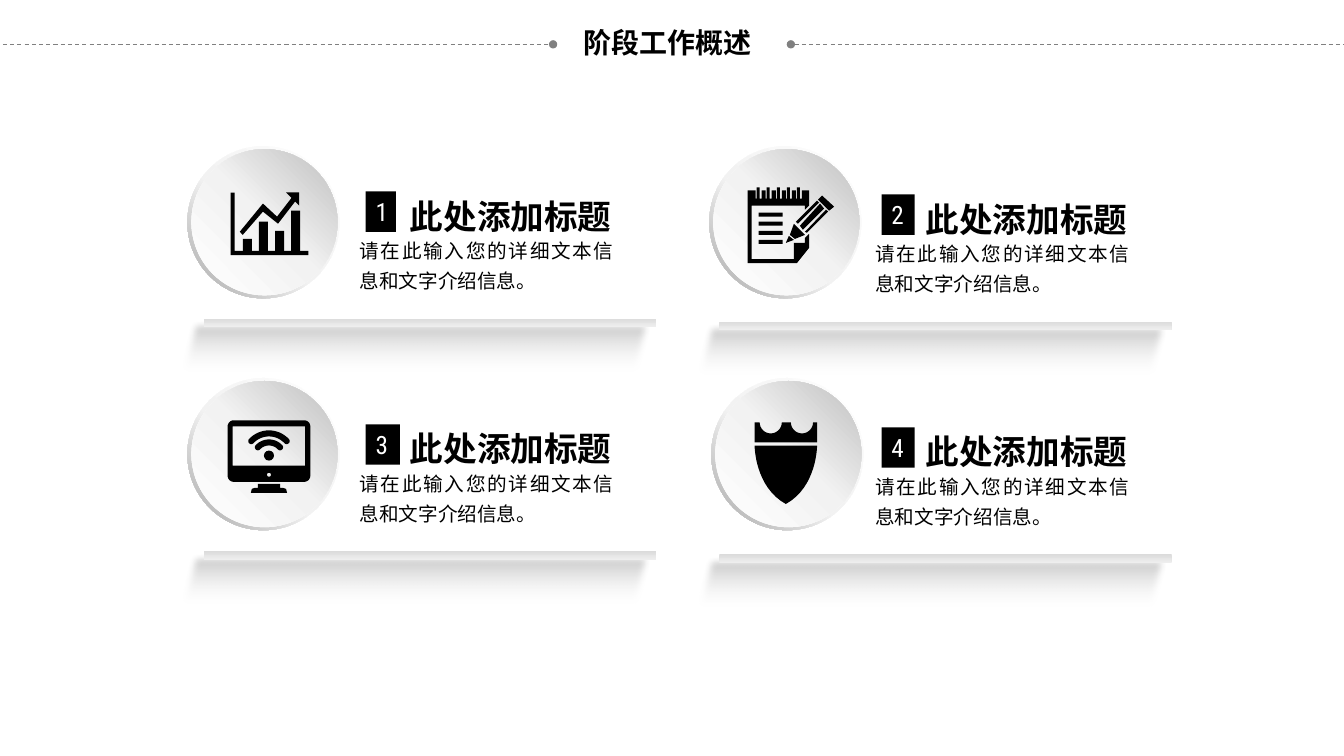
import dataclasses
import itertools
import math

import lxml.etree
import pptx
import pptx.dml.color
import pptx.enum.dml
import pptx.enum.shapes
import pptx.enum.text
import pptx.oxml
import pptx.oxml.ns
import pptx.util

Shape = pptx.enum.shapes.MSO_SHAPE
Align = pptx.enum.text.PP_ALIGN
Anchor = pptx.enum.text.MSO_ANCHOR
Point = tuple[float, float]
Stop = tuple[int, str, int]


@dataclasses.dataclass(frozen=True)
class Theme:
    black: str = "000000"
    white: str = "FFFFFF"
    rule: str = "808080"
    rim: tuple[Stop, ...] = ((0, "FFFFFF", 100), (55, "F2F2F2", 100), (100, "A6A6A6", 100))
    face: tuple[Stop, ...] = ((0, "FFFFFF", 100), (51, "F2F2F2", 100), (100, "BFBFBF", 100))
    shelf: tuple[Stop, ...] = ((0, "DBDBDB", 100), (100, "EEEEEE", 100))
    shade: tuple[Stop, ...] = ((0, "000000", 27), (81, "FFFFFF", 0))
    sans: str = "Noto Sans CJK SC"
    digit: str = "Roboto Condensed"
    head: int = 20
    title: int = 24
    label: int = 18
    body: int = 14


@dataclasses.dataclass(frozen=True)
class Box:
    left: float
    top: float
    width: float
    height: float


@dataclasses.dataclass(frozen=True)
class Card:
    number: str
    left: float
    top: float
    disc: Point
    tag: float


THEME = Theme()
CARDS = (
    Card("1", 1.71, 1.89, (1.86, 1.45), 0.3),
    Card("2", 6.83, 1.92, (7.04, 1.45), 0.33),
    Card("3", 1.71, 4.2, (1.86, 3.75), 0.34),
    Card("4", 6.83, 4.23, (7.06, 3.75), 0.33),
)


def span(inches: float) -> pptx.util.Length:
    return pptx.util.Cm(2.54 * inches)


def color(code: str) -> pptx.dml.color.RGBColor:
    return pptx.dml.color.RGBColor.from_string(code)


def paint(shape, code: str) -> None:
    shape.shadow.inherit = False
    shape.fill.solid()
    shape.fill.fore_color.rgb = color(code)
    shape.line.fill.background()


def blend(shape, stops: tuple[Stop, ...], angle: int) -> None:
    """Replace the fill by a linear gradient of (position, colour, opacity) stops."""
    marks = "".join(
        f'<a:gs pos="{pos * 1000}"><a:srgbClr val="{code}"><a:alpha val="{alpha * 1000}"/></a:srgbClr></a:gs>'
        for pos, code, alpha in stops)
    fill = pptx.oxml.parse_xml(
        f'<a:gradFill {pptx.oxml.ns.nsdecls("a")} rotWithShape="1"><a:gsLst>{marks}</a:gsLst>'
        f'<a:lin ang="{angle * 60000}" scaled="0"/></a:gradFill>')
    props = shape.element.spPr
    props.replace(props.find(pptx.oxml.ns.qn("a:solidFill")), fill)


def place(page, kind, box: Box, code: str = THEME.black):
    shape = page.add_shape(kind, *map(span, dataclasses.astuple(box)))
    paint(shape, code)
    return shape


def trace(page, *loops: list[Point]) -> None:
    """Draw one black outline; loops after the first cut holes."""
    first, *rest = [[(span(x), span(y)) for x, y in loop] for loop in loops]
    pen = page.build_freeform(*first[0])
    pen.add_line_segments(first[1:], close=True)
    for loop in rest:
        pen.move_to(*loop[0])
        pen.add_line_segments(loop[1:], close=True)
    paint(pen.convert_to_shape(), THEME.black)


def arc(x: float, y: float, radius: float, start: int, end: int) -> list[Point]:
    turns = [math.radians(start + (end - start) * k / 16) for k in range(17)]
    return [(x + radius * math.cos(t), y + radius * math.sin(t)) for t in turns]


def write(shape, text: str, font: str, size: int, code: str = THEME.black, bold: bool = False,
          align=Align.LEFT, wrap: bool = False, anchor=Anchor.TOP, space: float = 1.0) -> None:
    frame = shape.text_frame
    frame.text = text
    frame.word_wrap = wrap
    frame.vertical_anchor = anchor
    line = frame.paragraphs[0]
    line.alignment = align
    line.line_spacing = space
    run = line.runs[0]
    run.font.name, run.font.size, run.font.bold = font, pptx.util.Pt(size), bold
    run.font.color.rgb = color(code)
    east = lxml.etree.SubElement(run.font._element, pptx.oxml.ns.qn("a:ea"))
    east.set("typeface", font)


def label(page, box: Box, *args, **style) -> None:
    write(page.add_textbox(*map(span, dataclasses.astuple(box))), *args, **style)


def header(page) -> None:
    for start, end in ((-0.58, 5.49), (7.85, 13.91)):
        line = page.add_connector(pptx.enum.shapes.MSO_CONNECTOR.STRAIGHT,
                                  span(start), span(0.44), span(end), span(0.44))
        line.line.color.rgb = color(THEME.rule)
        line.line.width = pptx.util.Pt(0.75)
        line.line.dash_style = pptx.enum.dml.MSO_LINE.DASH
        for tip in ("a:headEnd", "a:tailEnd"):
            lxml.etree.SubElement(line.line._ln, pptx.oxml.ns.qn(tip)).set("type", "oval")
        lxml.etree.SubElement(line._element.spPr, pptx.oxml.ns.qn("a:effectLst"))
    label(page, Box(5.37, 0.16, 2.52, 0.52), "阶段工作概述", THEME.sans, THEME.head,
          bold=True, align=Align.CENTER, wrap=True, anchor=Anchor.MIDDLE)


def panel(page, card: Card) -> None:
    x, y = card.left, card.top
    left, top = card.disc
    rim = place(page, Shape.DONUT, Box(left, top, 1.51, 1.51))
    rim.adjustments[0] = 0.05
    blend(rim, THEME.rim, 135)
    blend(place(page, Shape.OVAL, Box(left + 0.04, top + 0.03, 1.45, 1.45)), THEME.face, 315)
    shade = place(page, Shape.PARALLELOGRAM, Box(x, y + 1.29, 4.79, 0.68))
    blend(shade, THEME.shade, 90)
    glow = shade.element.spPr.find(pptx.oxml.ns.qn("a:effectLst"))
    lxml.etree.SubElement(glow, pptx.oxml.ns.qn("a:softEdge")).set("rad", str(pptx.util.Pt(5)))
    blend(place(page, Shape.RECTANGLE, Box(x + 0.31, y + 1.27, 4.49, 0.08)), THEME.shelf, 90)
    label(page, Box(x + 2.26, y, 2.22, 0.5), "此处添加标题", THEME.sans, THEME.title, bold=True)
    label(page, Box(x + 1.76, y + 0.36, 2.72, 0.68), "请在此输入您的详细文本信息和文字介绍信息。",
          THEME.sans, THEME.body, align=Align.JUSTIFY, wrap=True, space=1.3)
    tag = place(page, Shape.RECTANGLE, Box(x + 1.92, y + 0.01, card.tag, 0.4))
    write(tag, card.number, THEME.digit, THEME.label, THEME.white)


def chart(page) -> None:
    trace(page, [(2.41, 2.33), (2.38, 2.3), (2.61, 2.02), (2.75, 2.15), (2.92, 1.93),
                 (2.96, 1.96), (2.76, 2.22), (2.61, 2.1)])
    trace(page, [(2.84, 1.91), (2.97, 1.91), (2.97, 2.04)])
    trace(page, [(3.06, 2.53), (2.29, 2.53), (2.29, 1.91), (2.33, 1.91), (2.33, 2.49), (3.06, 2.49)])
    for k, tall in enumerate((0.13, 0.3, 0.21, 0.41)):
        place(page, Shape.RECTANGLE, Box(2.41 + 0.16 * k, 2.5 - tall, 0.09, tall))


def notepad(page) -> None:
    pencil = (
        [(7.99, 2.3), (8.01, 2.31), (8.22, 2.1), (8.2, 2.08)],
        [(8.14, 2.02), (7.94, 2.24), (7.97, 2.28), (8.18, 2.07)],
        [(7.9, 2.2), (7.92, 2.22), (8.13, 2.01), (8.11, 1.99)],
        [(7.99, 2.33), (7.88, 2.22), (7.84, 2.33), (7.89, 2.37)],
        [(7.8, 2.41), (7.88, 2.38), (7.83, 2.34)],
        [(8.16, 1.94), (8.12, 1.98), (8.23, 2.09), (8.28, 2.05)],
    )
    for part in pencil:
        trace(page, part)
    teeth = [(7.42, 7.5, 1.89)]
    for k in range(5):
        x = 7.51 + 0.1 * k
        teeth += [(x, x + 0.03, 1.86), (x + 0.05, x + (0.09 if k < 4 else 0.12), 1.89)]
    comb = itertools.chain.from_iterable(
        ((a, 1.97), (a, top), (b, top), (b, 1.97)) for a, b, top in teeth)
    trace(page, [*comb, (8.03, 2.04), (7.99, 2.08), (7.99, 2.04), (7.46, 2.04), (7.46, 2.57),
                 (7.88, 2.57), (7.88, 2.41), (7.99, 2.41), (7.99, 2.36), (8.03, 2.32),
                 (8.03, 2.46), (7.91, 2.61), (7.42, 2.61)])
    for k in range(4):
        place(page, Shape.RECTANGLE, Box(7.53, 2.11 + 0.09 * k, 0.24, 0.04))


def screen(page) -> None:
    x, y = 2.67, 4.54
    trace(page, [(2.49, 4.89), (2.5, 4.85), (2.53, 4.84), (2.56, 4.84), (2.56, 4.8), (2.78, 4.8),
                 (2.78, 4.84), (2.81, 4.84), (2.84, 4.85), (2.85, 4.89)])
    frame = [*arc(2.32, 4.23, 0.06, 180, 270), *arc(3.02, 4.23, 0.06, 270, 360),
             *arc(3.02, 4.72, 0.06, 0, 90), *arc(2.32, 4.72, 0.06, 90, 180)]
    trace(page, frame, [(2.31, 4.23), (3.03, 4.23), (3.03, 4.62), (2.31, 4.62)],
          arc(x, 4.71, 0.02, 0, 360))
    for mid in (0.15, 0.24):
        (left, low), (right, _) = (arc(x, y, mid, turn, turn)[0] for turn in (223, 317))
        trace(page, [*arc(x, y, mid + 0.03, 223, 317), *arc(right, low, 0.03, 317, 497),
                     *arc(x, y, mid - 0.03, 317, 223), *arc(left, low, 0.03, 43, 223)])
    place(page, Shape.OVAL, Box(2.62, 4.47, 0.1, 0.1))


def shield(page) -> None:
    steps = [k / 16 for k in range(17)]
    side = [(0.31 * (1 - (1 - t) ** 3), 5 * (1 - t) ** 3 + 4.83 * 3 * t * (1 - t) ** 2
             + 4.42 * (3 * t * t - 2 * t ** 3)) for t in steps]
    trace(page, [(7.8 + dx, y) for dx, y in side] + [(7.8 - dx, y) for dx, y in reversed(side)])
    trace(page, [(7.49, 4.39), (7.49, 4.19), *arc(7.65, 4.19, 0.11, 180, 0),
                 *arc(7.96, 4.19, 0.11, 180, 0), (8.11, 4.19), (8.11, 4.39)])


def main() -> None:
    deck = pptx.Presentation()
    deck.slide_width, deck.slide_height = span(13.34), span(7.5)
    page = deck.slides.add_slide(deck.slide_layouts[6]).shapes
    header(page)
    for card, icon in zip(CARDS, (chart, notepad, screen, shield)):
        panel(page, card)
        icon(page)
    deck.save("out.pptx")


if __name__ == "__main__":
    main()
